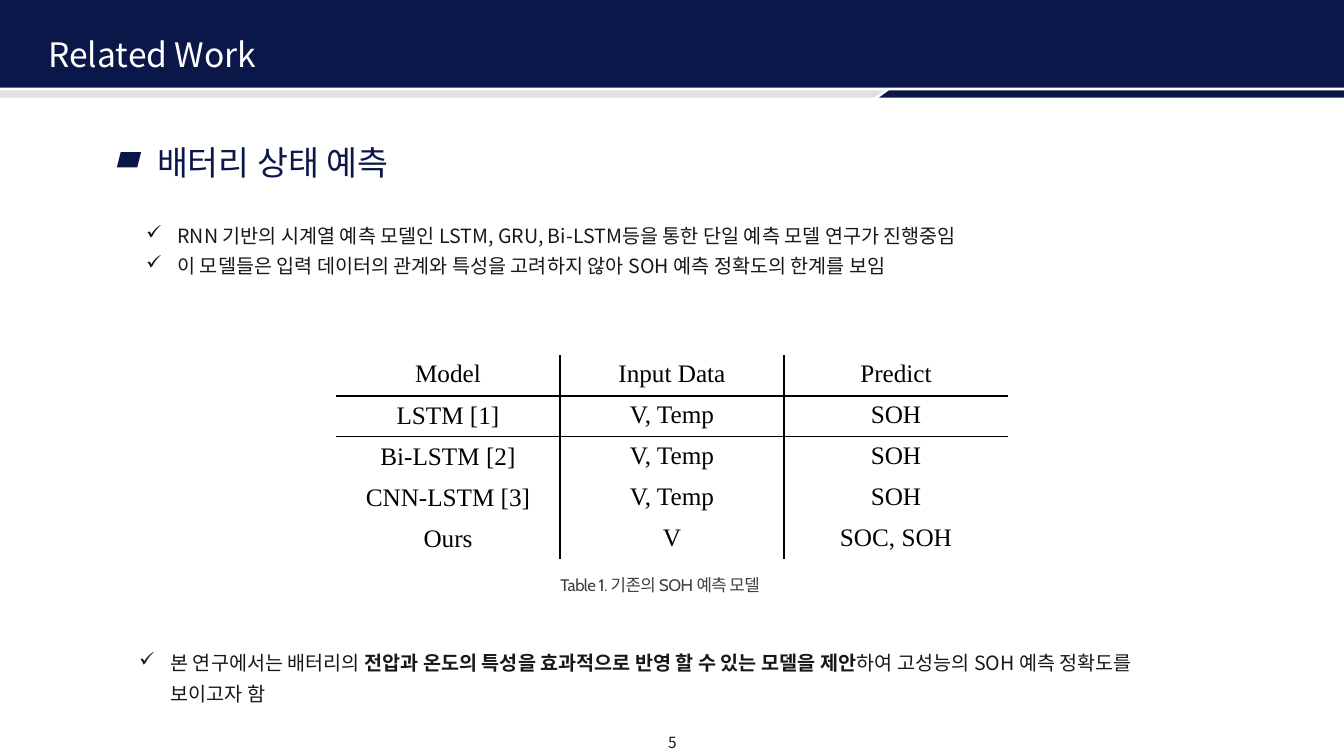
import dataclasses

import pptx
import pptx.dml.color
import pptx.enum.shapes
import pptx.enum.text
import pptx.oxml
import pptx.oxml.ns
import pptx.util

Pt = pptx.util.Pt
RGB = pptx.dml.color.RGBColor.from_string
ALIGN = pptx.enum.text.PP_ALIGN
ANCHOR = pptx.enum.text.MSO_ANCHOR
SHAPE = pptx.enum.shapes.MSO_SHAPE
NS = pptx.oxml.ns.nsdecls("a")


@dataclasses.dataclass(frozen=True)
class Theme:
    navy: str = "0B1749"
    silver: str = "E0E1E3"
    white: str = "FFFFFF"
    ink: str = "181818"
    black: str = "000000"
    grey: str = "404040"
    sans: str = "Noto Sans CJK KR"
    serif: str = "Times New Roman"
    caption_font: str = "Cabin"
    heading: int = 24
    cell: int = 18
    body: int = 14
    caption: int = 12
    number: int = 11


T = Theme()
MODELS = [
    ("Model", "Input Data", "Predict"),
    ("LSTM [1]", "V, Temp", "SOH"),
    ("Bi-LSTM [2]", "V, Temp", "SOH"),
    ("CNN-LSTM [3]", "V, Temp", "SOH"),
    ("Ours", "V", "SOC, SOH"),
]


def apply(target, values):
    for name, value in values.items():
        setattr(target, name, value)


def write(p, runs, size, color, font=T.sans, spacing=None, **layout):
    """Fill a paragraph with (text, bold) runs."""
    apply(p, layout)
    for text, bold in runs:
        r = p.add_run()
        r.text = text
        apply(r.font, {"size": Pt(size), "name": font, "bold": bold})
        r.font.color.rgb = RGB(color)
        rpr = r.font._element
        rpr.append(pptx.oxml.parse_xml(f'<a:ea {NS} typeface="{T.sans}"/>'))
        if spacing is not None:
            rpr.set("spc", str(spacing))


def text_box(s, box, **frame):
    tf = s.shapes.add_textbox(*map(Pt, box)).text_frame
    apply(tf, {"word_wrap": True, **frame})
    return tf


def paint(sp, color):
    sp.shadow.inherit = False
    sp.fill.solid()
    sp.fill.fore_color.rgb = RGB(color)
    sp.line.fill.background()


def polygon(s, points, color):
    corners = [(Pt(x), Pt(y)) for x, y in points]
    fb = s.shapes.build_freeform(*corners[0])
    fb.add_line_segments(corners[1:], close=True)
    paint(fb.convert_to_shape(), color)


def header(s, box, title):
    x, y, w, h = box
    paint(s.shapes.add_shape(SHAPE.RECTANGLE, *map(Pt, box)), T.navy)
    top, bottom, right = y + h + 2, y + h + 7.2, x + w
    polygon(s, [(x, top), (x + 631.5, top), (x + 624.3, bottom), (x, bottom)], T.silver)
    polygon(s, [(x + 635, top), (right, top), (right, bottom), (x + 627.8, bottom)], T.navy)
    tf = text_box(s, (x + 27.4, y + 23.8, 422, 33.8), vertical_anchor=ANCHOR.MIDDLE)
    write(tf.paragraphs[0], [(title, None)], T.heading, T.white,
          line_spacing=0.9, space_before=Pt(10))


def section_heading(s, box, text):
    x, y, w, h = box
    tf = text_box(s, (x + 21.6, y, w - 21.6, h), vertical_anchor=ANCHOR.MIDDLE)
    write(tf.paragraphs[0], [(text, None)], T.heading, T.navy, line_spacing=1.3)
    paint(s.shapes.add_shape(SHAPE.PARALLELOGRAM, Pt(x), Pt(y + 18), Pt(17.3), Pt(10.8)), T.navy)


def check_list(s, box, items):
    tf = text_box(s, box)
    for i, runs in enumerate(items):
        p = tf.add_paragraph() if i else tf.paragraphs[0]
        write(p, runs, T.body, T.ink, line_spacing=1.3)
        ppr = p._p.get_or_add_pPr()
        apply_indent = {"marL": Pt(22.5), "indent": -Pt(22.5)}
        for name, value in apply_indent.items():
            ppr.set(name, str(value))
        ppr.append(pptx.oxml.parse_xml(f'<a:buChar {NS} char="✓"/>'))


def set_borders(cell, widths):
    """Draw the sides named in widths (L, R, T, B) and clear the others."""
    tcpr = cell._tc.get_or_add_tcPr()
    for i, side in enumerate("LRTB"):
        width = widths.get(side, 0)
        line = (f'<a:solidFill><a:srgbClr val="{T.black}"/></a:solidFill>'
                if width else "<a:noFill/>")
        tcpr.insert(i, pptx.oxml.parse_xml(
            f'<a:ln{side} {NS} w="{int(Pt(width))}">{line}</a:ln{side}>'))


def model_table(s, box, rows):
    tbl = s.shapes.add_table(len(rows), len(rows[0]), *map(Pt, box)).table
    apply(tbl, {"first_row": False, "horz_banding": False})
    rules = {0: 1.5, 1: 0.75}  # widths of the lines below the first rows
    last = len(rows[0]) - 1
    for i, row in enumerate(rows):
        for j, text in enumerate(row):
            cell = tbl.cell(i, j)
            cell.fill.background()
            if i and not j:
                cell.vertical_anchor = ANCHOR.MIDDLE
            write(cell.text_frame.paragraphs[0], [(text, None)], T.cell, T.black,
                  T.serif, alignment=ALIGN.CENTER)
            set_borders(cell, {"L": 1.5 if j else 0, "R": 1.5 if j < last else 0,
                               "T": rules.get(i - 1, 0), "B": rules.get(i, 0)})


def table_caption(s, box, text):
    tf = text_box(s, box, word_wrap=False, margin_left=0, margin_right=0,
                  margin_top=0, margin_bottom=0)
    write(tf.paragraphs[0], [(text, None)], T.caption, T.grey, T.caption_font, spacing=-40)


def page_number(s, box, number):
    write(text_box(s, box).paragraphs[0], [(str(number), None)], T.number, T.ink,
          alignment=ALIGN.CENTER)


def main():
    prs = pptx.Presentation()
    apply(prs, {"slide_width": Pt(960), "slide_height": Pt(540)})
    s = prs.slides.add_slide(prs.slide_layouts[6])
    header(s, (0, 0, 960, 62.6), "Related Work")
    page_number(s, (455.8, 519.8, 49, 20.9), 5)
    section_heading(s, (83.5, 90.7, 443.5, 41), "배터리 상태 예측")
    check_list(s, (97.2, 151.2, 761.8, 49), [
        [("RNN 기반의 시계열 예측 모델인 LSTM, GRU, Bi-LSTM등을 통한 단일 예측 모델 연구가 진행중임", None)],
        [("이 모델들은 입력 데이터의 관계와 특성을 고려하지 않아 SOH 예측 정확도의 한계를 보임", None)],
    ])
    model_table(s, (240, 253.6, 480, 146), MODELS)
    table_caption(s, (400.3, 410.4, 160, 14.4), "Table 1. 기존의 SOH 예측 모델")
    check_list(s, (92.2, 456.5, 755.3, 49), [[
        ("본 연구에서는 배터리의 ", None),
        ("전압과 온도의 특성을 효과적으로 반영 할 수 있는 모델을 제안", True),
        ("하여 고성능의 SOH 예측 정확도를 보이고자 함", None),
    ]])
    prs.save("out.pptx")


if __name__ == "__main__":
    main()
